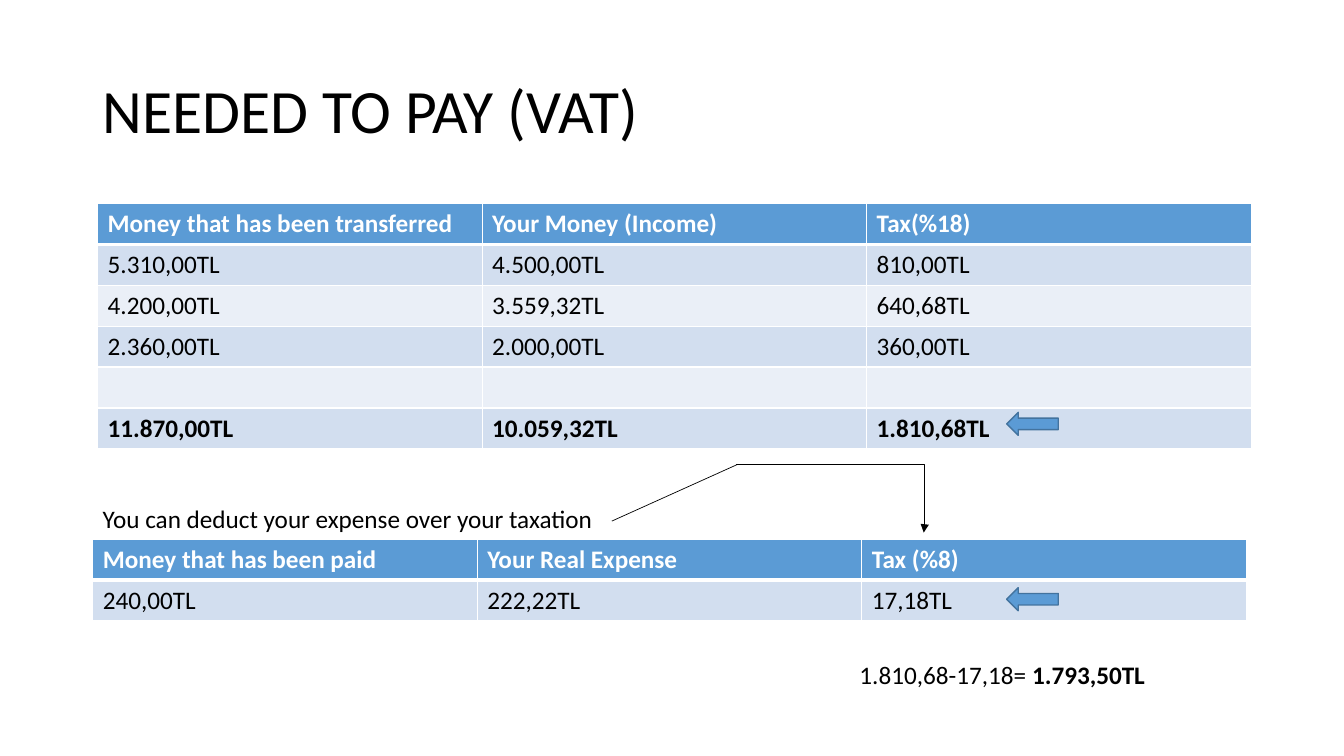
import pptx
import pptx.util
import pptx.dml.color
import pptx.enum.shapes
import pptx.enum.text
import pptx.oxml
import pptx.oxml.ns
from pptx.util import Cm

HUES = {
    "head": "5B9BD5",
    "edge": "43739E",
    "odd": "D2DEEF",
    "even": "EAEFF7",
    "ink": "000000",
    "white": "FFFFFF",
}
COL = 9.69
ROW = 1.03
LEFT = 2.34

INCOME = [
    ["Money that has been transferred", "Your Money (Income)", "Tax(%18)"],
    ["5.310,00TL", "4.500,00TL", "810,00TL"],
    ["4.200,00TL", "3.559,32TL", "640,68TL"],
    ["2.360,00TL", "2.000,00TL", "360,00TL"],
    ["", "", ""],
    ["11.870,00TL", "10.059,32TL", "1.810,68TL"],
]
COSTS = [
    ["Money that has been paid", "Your Real Expense", "Tax (%8)"],
    ["240,00TL", "222,22TL", "17,18TL"],
]


def shade(name):
    return pptx.dml.color.RGBColor.from_string(HUES[name])


def paint(fill, name):
    fill.solid()
    fill.fore_color.rgb = shade(name)


def node(parent, tag, **attrs):
    item = pptx.oxml.ns.qn(tag)
    child = parent.makeelement(item, attrs)
    parent.append(child)
    return child


def write(para, text, size=18, bold=False, hue="ink"):
    run = para.add_run()
    run.text = text
    run.font.name = "Calibri"
    run.font.size = pptx.util.Pt(size)
    run.font.bold = bold
    run.font.color.rgb = shade(hue)


def add_box(slide, left, top, width, height):
    box = slide.shapes.add_textbox(Cm(left), Cm(top), Cm(width), Cm(height))
    box.text_frame.word_wrap = True
    return box.text_frame


def add_edge(cell, side, width):
    props = cell._tc.get_or_add_tcPr()
    line = node(props, "a:ln" + side, w=str(pptx.util.Pt(width)))
    node(node(line, "a:solidFill"), "a:srgbClr", val=HUES["white"])


def add_grid(slide, left, top, data, total=None):
    wide, high = len(data[0]), len(data)
    frame = slide.shapes.add_table(
        high, wide, Cm(left), Cm(top), Cm(COL * wide), Cm(ROW * high))
    grid = frame.table
    for col in grid.columns:
        col.width = Cm(COL)
    for r, texts in enumerate(data):
        grid.rows[r].height = Cm(ROW)
        fill = "head" if r == 0 else "odd" if r % 2 else "even"
        for c, text in enumerate(texts):
            cell = grid.cell(r, c)
            for side in "LRTB":
                thick = (r, side) in ((0, "B"), (1, "T"))
                add_edge(cell, side, 3 if thick else 1)
            paint(cell.fill, fill)
            if text:
                write(cell.text_frame.paragraphs[0], text,
                      bold=r in (0, total), hue="ink" if r else "white")


def add_line(slide, kind, start, end):
    line = slide.shapes.add_connector(
        kind, *(Cm(value) for value in start + end))
    line.line.color.rgb = shade("ink")
    line.line.width = pptx.util.Pt(0.5)
    node(line._element.spPr, "a:effectLst")
    return line


def add_elbow(slide, start, end):
    kind = pptx.enum.shapes.MSO_CONNECTOR.ELBOW
    bend = add_line(slide, kind, start, end)
    node(bend.line._get_or_add_ln(), "a:tailEnd", type="triangle")
    shape = bend._element.spPr.find(pptx.oxml.ns.qn("a:prstGeom"))
    guides = shape.find(pptx.oxml.ns.qn("a:avLst"))
    if guides is None:
        guides = node(shape, "a:avLst")
    node(guides, "a:gd", name="adj1", fmla="val 100500")


def add_arrow(slide, left, top):
    kind = pptx.enum.shapes.MSO_SHAPE.RIGHT_ARROW
    arrow = slide.shapes.add_shape(kind, Cm(left), Cm(top), Cm(1.3), Cm(0.58))
    arrow.rotation = 180
    arrow.shadow.inherit = False
    paint(arrow.fill, "head")
    arrow.line.color.rgb = shade("edge")
    arrow.line.width = pptx.util.Pt(1)


def main():
    deck = pptx.Presentation()
    deck.slide_width, deck.slide_height = Cm(33.87), Cm(19.05)
    slide = deck.slides.add_slide(deck.slide_layouts[6])

    title = add_box(slide, LEFT, 1.02, 29.21, 3.68)
    title.vertical_anchor = pptx.enum.text.MSO_ANCHOR.MIDDLE
    title.paragraphs[0].line_spacing = 0.9
    write(title.paragraphs[0], "NEEDED TO PAY (VAT)", size=44)

    add_grid(slide, 2.46, 5.13, INCOME, total=5)
    add_grid(slide, LEFT, 13.59, COSTS)

    note = add_box(slide, LEFT, 12.57, 18.36, ROW)
    write(note.paragraphs[0], "You can deduct your expense over your taxation")

    add_elbow(slide, (18.55, 11.71), (23.28, 13.42))
    straight = pptx.enum.shapes.MSO_CONNECTOR.STRAIGHT
    add_line(slide, straight, (15.42, 13.13), (18.57, 11.71))

    for top in (10.39, 14.81):
        add_arrow(slide, 25.37, top)

    result = add_box(slide, 21.41, 16.48, 8.46, ROW).paragraphs[0]
    write(result, "1.810,68-17,18= ")
    write(result, "1.793,50TL", bold=True)

    deck.save("out.pptx")


if __name__ == "__main__":
    main()
